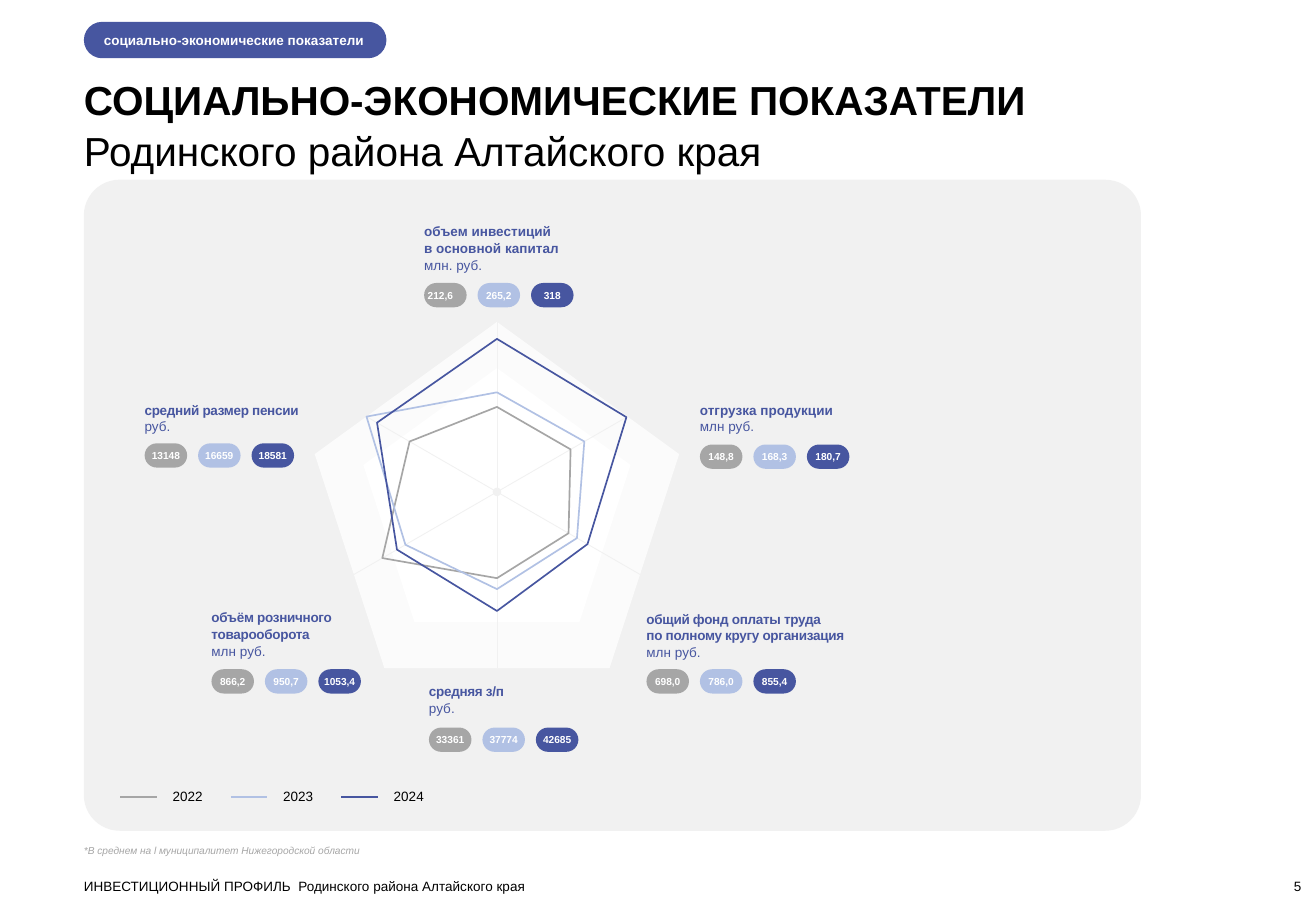
import math
import dataclasses
import pptx
import pptx.util
import pptx.dml.color
import pptx.enum.shapes
import pptx.enum.text
import pptx.oxml
import pptx.oxml.ns

Inches = pptx.util.Inches
SHAPE = pptx.enum.shapes.MSO_SHAPE
ALIGN = pptx.enum.text.PP_ALIGN
ANCHOR = pptx.enum.text.MSO_ANCHOR


@dataclasses.dataclass(frozen=True)
class Theme:
    font: str = "Arial"
    accent: str = "4756A0"
    light: str = "B1C1E4"
    gray: str = "A6A6A6"
    panel: str = "F1F1F1"
    outer: str = "FBFBFB"
    white: str = "FFFFFF"
    black: str = "000000"
    title: int = 24
    text: int = 8
    small: int = 6


THEME = Theme()

TAG = "социально-экономические показатели"
TITLE = ["СОЦИАЛЬНО-ЭКОНОМИЧЕСКИЕ ПОКАЗАТЕЛИ", "Родинского района Алтайского края"]
FOOTNOTE = "*В среднем на l муниципалитет Нижегородской области"
FOOTER = "ИНВЕСТИЦИОННЫЙ ПРОФИЛЬ  Родинского района Алтайского края"
PAGE_NUMBER = "5"

# Year, colour, distance of each point from the centre (clockwise from the top)
YEARS = [
    ("2022", THEME.gray, [0.7, 0.7, 0.68, 0.71, 1.09, 0.83]),
    ("2023", THEME.light, [0.82, 0.83, 0.76, 0.8, 0.87, 1.24]),
    ("2024", THEME.accent, [1.26, 1.23, 0.86, 0.98, 0.95, 1.14]),
]

# Left, label top, pill top, label lines (the last is the unit), values, letter spacing
INDICATORS = [
    (3.49, 1.83, 2.33, ["объем инвестиций", "в основной капитал", "млн. руб."],
     ["212,6", "265,2", "318"], 0),
    (5.76, 3.3, 3.66, ["отгрузка продукции", "млн руб."],
     ["148,8", "168,3", "180,7"], 0),
    (5.32, 5.02, 5.51, ["общий фонд оплаты труда", "по полному кругу организация", "млн руб."],
     ["698,0", "786,0", "855,4"], -20),
    (3.53, 5.62, 5.99, ["средняя з/п", "руб."],
     ["33361", "37774", "42685"], -20),
    (1.74, 5.01, 5.51, ["объём розничного", "товарооборота", "млн руб."],
     ["866,2", "950,7", "1053,4"], -20),
    (1.19, 3.3, 3.65, ["средний размер пенсии", "руб."],
     ["13148", "16659", "18581"], -20),
]

LEFT = 0.69
CENTRE = (4.09, 4.05)
SPOKES = [1.4, 1.27, 1.37, 1.45, 1.37, 1.27]
PILL_SIZE = (0.35, 0.2)
PILL_STEP = 0.44
LEGEND_LEFT, LEGEND_TOP, LEGEND_STEP = 0.99, 6.56, 0.91


def rgb(value):
    return pptx.dml.color.RGBColor.from_string(value)


def write(shape, lines, size=THEME.text, color=THEME.black, bold=(False,), italic=False,
          align=ALIGN.LEFT, anchor=ANCHOR.TOP, inset=0, tracking=0, line_spacing=1.0):
    """Fill a shape with one paragraph per line; the last bold flag serves the rest."""
    frame = shape.text_frame
    frame.auto_size = pptx.enum.text.MSO_AUTO_SIZE.NONE
    frame.word_wrap = True
    frame.vertical_anchor = anchor
    frame.margin_left = Inches(inset)
    frame.margin_right = frame.margin_top = frame.margin_bottom = 0
    for index, line in enumerate(lines):
        para = frame.paragraphs[0] if index == 0 else frame.add_paragraph()
        para.alignment = align
        para.line_spacing = line_spacing
        span = para.add_run()
        span.text = line
        span.font.name = THEME.font
        span.font.size = pptx.util.Pt(size)
        span.font.bold = bold[min(index, len(bold) - 1)]
        span.font.italic = italic
        span.font.color.rgb = rgb(color)
        if tracking and span.font.bold:
            span.font._element.set("spc", str(tracking))


def add_text(page, at, lines, **style):
    box = page.shapes.add_textbox(*map(Inches, at))
    write(box, lines, **style)


def add_block(shapes, kind, at, fill, corner=None):
    block = shapes.add_shape(kind, *map(Inches, at))
    block.shadow.inherit = False
    block.fill.solid()
    block.fill.fore_color.rgb = rgb(fill)
    block.line.fill.background()
    if corner is not None:
        block.adjustments[0] = corner
    return block


def add_line(shapes, start, end, color, width):
    line = shapes.add_connector(pptx.enum.shapes.MSO_CONNECTOR.STRAIGHT,
                                *map(Inches, start + end))
    line.line.color.rgb = rgb(color)
    line.line.width = pptx.util.Pt(width)
    properties = line._element.find(pptx.oxml.ns.qn("p:spPr"))
    properties.append(pptx.oxml.parse_xml(
        "<a:effectLst %s/>" % pptx.oxml.ns.nsdecls("a")))


def axis_point(axis, radius):
    angle = math.radians(60 * axis)
    return (CENTRE[0] + radius * math.sin(angle), CENTRE[1] - radius * math.cos(angle))


def add_radar_grid(page):
    grid = page.shapes.add_group_shape().shapes
    add_block(grid, SHAPE.REGULAR_PENTAGON, (2.59, 2.65, 3, 2.85), THEME.outer)
    add_block(grid, SHAPE.REGULAR_PENTAGON, (2.99, 3.03, 2.2, 2.09), THEME.white)
    for axis in range(3):
        add_line(grid, axis_point(axis, SPOKES[axis]),
                 axis_point(axis + 3, SPOKES[axis + 3]), THEME.panel, 0.5)
    dot = 0.07
    add_block(grid, SHAPE.OVAL,
              (CENTRE[0] - dot / 2, CENTRE[1] - dot / 2, dot, dot), THEME.panel)


def add_radar_outline(page, radii, color):
    points = [tuple(map(Inches, axis_point(axis, radius)))
              for axis, radius in enumerate(radii)]
    builder = page.shapes.build_freeform(*points[0])
    builder.add_line_segments(points[1:], close=True)
    outline = builder.convert_to_shape()
    outline.shadow.inherit = False
    outline.fill.background()
    outline.line.color.rgb = rgb(color)
    outline.line.width = pptx.util.Pt(1)


def add_indicator(page, left, top, pill_top, lines, values, tracking):
    add_text(page, (left, top, 1.75, 0.135 * len(lines)), lines, color=THEME.accent,
             bold=[True] * (len(lines) - 1) + [False], tracking=tracking, line_spacing=1.05)
    for index, (value, (_, color, _)) in enumerate(zip(values, YEARS)):
        pill = add_block(page.shapes, SHAPE.ROUNDED_RECTANGLE,
                         (left + index * PILL_STEP, pill_top) + PILL_SIZE, color, 0.5)
        align = ALIGN.LEFT if value == "212,6" else ALIGN.CENTER
        write(pill, [value], size=THEME.small, color=THEME.white, bold=[True],
              align=align, anchor=ANCHOR.MIDDLE)


def add_legend_entry(page, index, year, color):
    left = LEGEND_LEFT + index * LEGEND_STEP
    add_line(page.shapes, (left, LEGEND_TOP), (left + 0.3, LEGEND_TOP), color, 1)
    add_text(page, (left + 0.43, LEGEND_TOP - 0.07, 0.4, 0.13), [year])


def main():
    deck = pptx.Presentation()
    deck.slide_width, deck.slide_height = Inches(10.83), Inches(7.5)
    page = deck.slides.add_slide(deck.slide_layouts[5])

    title = page.shapes.title
    title.left, title.top, title.width, title.height = map(Inches, (LEFT, 0.6, 9.65, 0.81))
    write(title, TITLE, size=THEME.title, bold=[True, False], line_spacing=1.05)

    tag = add_block(page.shapes, SHAPE.ROUNDED_RECTANGLE,
                    (LEFT, 0.18, 2.49, 0.3), THEME.accent, 0.5)
    write(tag, [TAG], color=THEME.white, bold=[True], anchor=ANCHOR.MIDDLE, inset=0.12)
    add_block(page.shapes, SHAPE.ROUNDED_RECTANGLE,
              (LEFT, 1.48, 8.7, 5.36), THEME.panel, 0.055)

    add_radar_grid(page)
    for index, (year, color, radii) in enumerate(YEARS):
        add_legend_entry(page, index, year, color)
        add_radar_outline(page, radii, color)
    for indicator in INDICATORS:
        add_indicator(page, *indicator)

    add_text(page, (LEFT, 6.95, 4.68, 0.1), [FOOTNOTE],
             size=THEME.small, color=THEME.gray, italic=True)
    add_text(page, (LEFT, 7.23, 8, 0.13), [FOOTER])
    add_text(page, (9.91, 7.23, 0.8, 0.13), [PAGE_NUMBER],
             align=ALIGN.RIGHT, anchor=ANCHOR.BOTTOM)
    deck.save("out.pptx")


if __name__ == "__main__":
    main()
